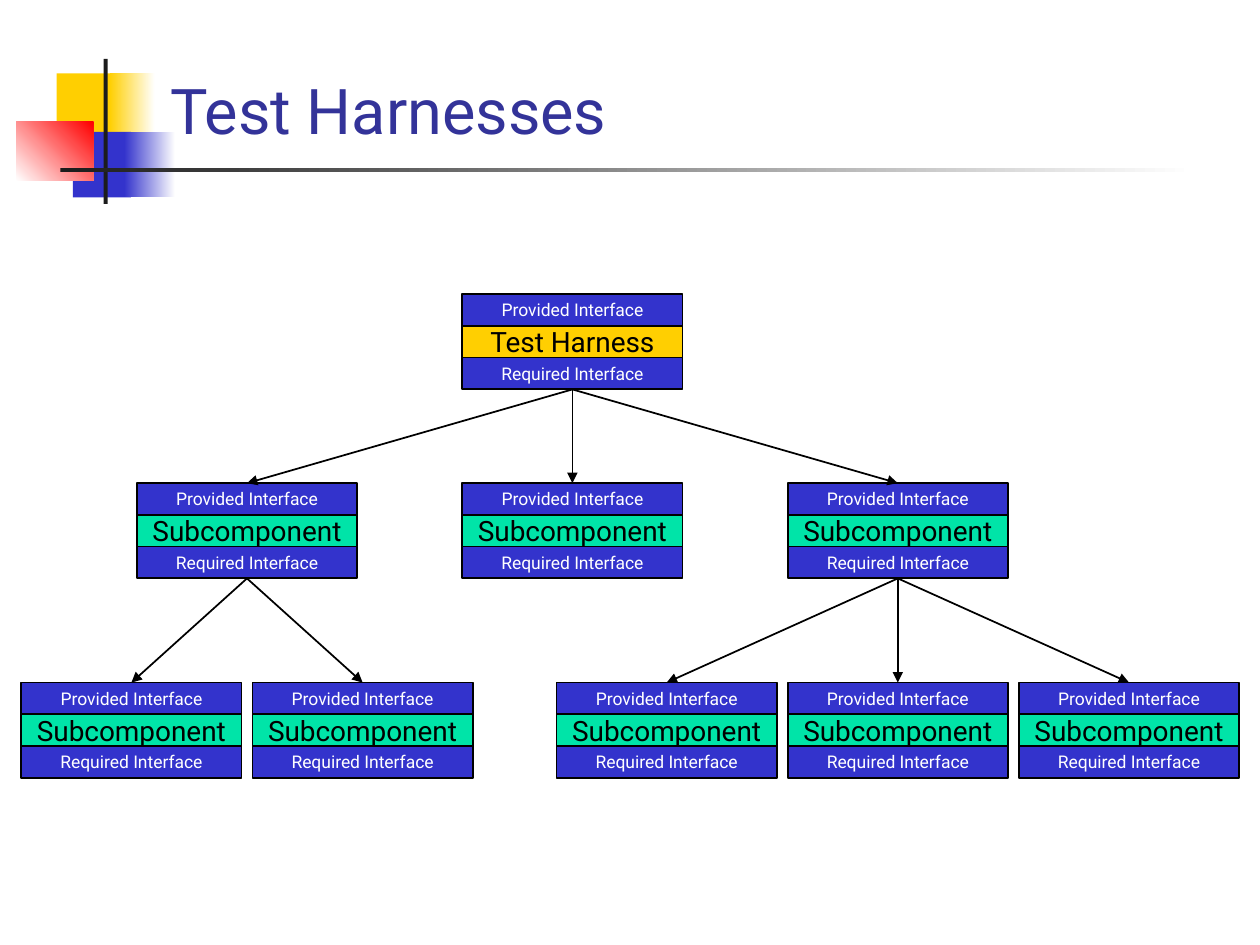
"""Builds the Test Harnesses slide: a harness above a tree of subcomponents."""
from dataclasses import dataclass

from lxml.etree import SubElement
from pptx import Presentation
from pptx.dml.color import RGBColor as Rgb
from pptx.enum.shapes import MSO_CONNECTOR as Connector, MSO_SHAPE as Shape
from pptx.enum.text import MSO_ANCHOR as Anchor, PP_ALIGN as Align
from pptx.oxml.ns import qn
from pptx.util import Cm, Pt


@dataclass(frozen=True)
class Theme:
    font: str = "Roboto"
    heading: str = "333399"
    blue: str = "3333CC"
    yellow: str = "FFCF01"
    green: str = "00E4A8"
    red: str = "FF0000"
    white: str = "FFFFFF"
    black: str = "000000"
    charcoal: str = "1C1C1C"
    heading_size: int = 36
    name_size: int = 16
    interface_size: int = 10
    line_width: int = 1


THEME = Theme()

TITLE = "Test Harnesses"
TITLE_AREA = (3.18, 0.99, 21.64, 2.11)
PROVIDED, REQUIRED = "Provided Interface", "Required Interface"
LEAF = ("Subcomponent", [])
HARNESS = ("Test Harness", [
    ("Subcomponent", [LEAF] * 2),
    LEAF,
    ("Subcomponent", [LEAF] * 3),
])

ORNAMENTS = [
    ((1.14, 1.48, 1.22, 1.32), [THEME.yellow], 0),
    ((2.21, 1.48, 0.91, 1.32), [THEME.yellow, THEME.white], 0),
    ((1.47, 2.66, 1.17, 1.32), [THEME.blue], 0),
    ((2.51, 2.66, 1.02, 1.32), [THEME.blue, THEME.white], 0),
    ((0.33, 2.46, 1.55, 1.18), [THEME.white, THEME.red], 45),
    ((2.09, 1.19, 0.08, 2.92), [THEME.charcoal], 0),
    ((1.22, 3.38, 22.86, 0.08), [THEME.charcoal, THEME.white], 0),
]

HARNESS_CENTRE = 11.54
LEVEL_TOPS = [5.93, 9.74, 13.76]
SIBLING_STEPS = [6.56, 4.66]
BOX_WIDTH, ROW_HEIGHT = 4.44, 0.64


def format_runs(frame, size, color):
    for run in frame.paragraphs[0].runs:
        run.font.name = THEME.font
        run.font.size = Pt(size)
        run.font.color.rgb = Rgb.from_string(color)


def add_rectangle(shapes, area, colors, angle=0):
    rectangle = shapes.add_shape(Shape.RECTANGLE, *map(Cm, area))
    rectangle.shadow.inherit = False
    rectangle.line.fill.background()
    if len(colors) == 1:
        rectangle.fill.solid()
        rectangle.fill.fore_color.rgb = Rgb.from_string(colors[0])
    else:
        rectangle.fill.gradient()
        rectangle.fill.gradient_angle = angle
        for stop, color in zip(rectangle.fill.gradient_stops, colors):
            stop.color.rgb = Rgb.from_string(color)
    return rectangle


def outline(line):
    line.color.rgb = Rgb.from_string(THEME.black)
    line.width = Pt(THEME.line_width)


def add_component(shapes, name, centre, level):
    name_fill = THEME.green if level else THEME.yellow
    rows = [
        (PROVIDED, THEME.blue, THEME.interface_size, THEME.white),
        (name, name_fill, THEME.name_size, THEME.black),
        (REQUIRED, THEME.blue, THEME.interface_size, THEME.white),
    ]
    group = shapes.add_group_shape()
    boxes = []
    for index, (label, fill, size, color) in enumerate(rows):
        area = (centre - BOX_WIDTH / 2, LEVEL_TOPS[level] + index * ROW_HEIGHT,
                BOX_WIDTH, ROW_HEIGHT)
        box = add_rectangle(group.shapes, area, [fill])
        outline(box.line)
        frame = box.text_frame
        frame.text = label
        frame.word_wrap = False
        frame.vertical_anchor = Anchor.MIDDLE
        frame.paragraphs[0].alignment = Align.CENTER
        format_runs(frame, size, color)
        boxes.append(box)
    return boxes[0], boxes[-1]


def add_arrow(shapes, required, provided):
    arrow = shapes.add_connector(Connector.STRAIGHT, 0, 0, 0, 0)
    arrow.begin_connect(required, 2)
    arrow.end_connect(provided, 0)
    outline(arrow.line)
    SubElement(arrow.line._get_or_add_ln(), qn("a:tailEnd"), type="triangle")
    SubElement(arrow._element.spPr, qn("a:effectLst"))


def add_tree(shapes, component, centre, level=0):
    name, children = component
    provided, required = add_component(shapes, name, centre, level)
    for index, child in enumerate(children):
        offset = (index - (len(children) - 1) / 2) * SIBLING_STEPS[level]
        child_provided = add_tree(shapes, child, centre + offset, level + 1)
        add_arrow(shapes, required, child_provided)
    return provided


def add_title(shapes):
    title = shapes.title
    title.left, title.top, title.width, title.height = map(Cm, TITLE_AREA)
    frame = title.text_frame
    frame.text = TITLE
    frame.word_wrap = True
    frame.vertical_anchor = Anchor.BOTTOM
    frame.paragraphs[0].alignment = Align.LEFT
    format_runs(frame, THEME.heading_size, THEME.heading)
    shapes._spTree.append(title._element)


def main():
    deck = Presentation()
    deck.slide_width, deck.slide_height = Cm(25.4), Cm(19.05)
    shapes = deck.slides.add_slide(deck.slide_layouts[5]).shapes
    for area, colors, angle in ORNAMENTS:
        add_rectangle(shapes, area, colors, angle)
    add_title(shapes)
    add_tree(shapes, HARNESS, HARNESS_CENTRE)
    deck.save("out.pptx")


if __name__ == "__main__":
    main()
